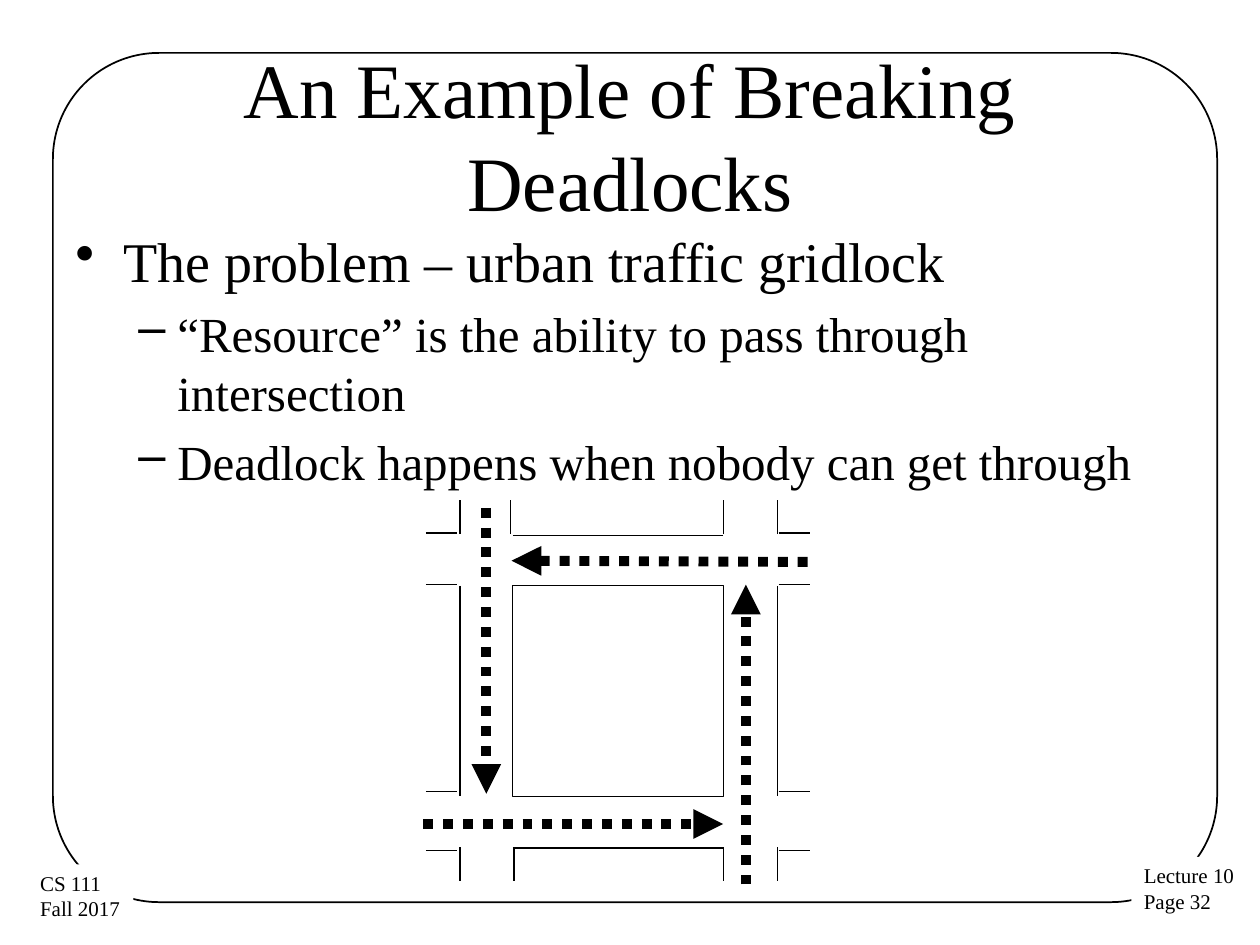
from itertools import product
from typing import NamedTuple

from lxml.etree import SubElement
from pptx import Presentation
from pptx.dml.color import RGBColor
from pptx.enum.dml import MSO_LINE_DASH_STYLE as Dash
from pptx.enum.shapes import MSO_CONNECTOR_TYPE as Connector, MSO_SHAPE as Preset
from pptx.enum.text import MSO_ANCHOR as Anchor, PP_ALIGN as Align
from pptx.oxml.ns import qn
from pptx.util import Inches, Pt

FONT = "Times New Roman"
BLACK = "000000"
WHITE = "FFFFFF"


class Box(NamedTuple):
    left: float
    top: float
    width: float
    height: float


class Segment(NamedTuple):
    x1: float
    y1: float
    x2: float
    y2: float


class Level(NamedTuple):
    bullet: str
    size: int
    margin: float
    indent: float


class Point(NamedTuple):
    text: str
    level: int


class Footer(NamedTuple):
    box: Box
    lines: tuple[str, ...]


LEVELS = [Level("•", 32, 0.38, -0.38), Level("–", 28, 0.81, -0.31)]
POINTS = [
    Point("The problem – urban traffic gridlock", 0),
    Point("“Resource” is the ability to pass through intersection", 1),
    Point("Deadlock happens when nobody can get through", 1),
]
FOOTERS = [
    Footer(Box(8.98, 6.8, 0.93, 0.51), ("Lecture 10", "Page 32")),
    Footer(Box(0.22, 6.86, 0.84, 0.51), ("CS 111", "Fall 2017")),
]

WEST, BLOCK_LEFT, BLOCK_RIGHT, EAST = 3.65, 4.07, 5.74, 6.17
BLOCK_TOP, BLOCK_BOTTOM = 4.65, 6.32
BLOCK_EDGES = [
    Segment(BLOCK_LEFT, 4.25, BLOCK_RIGHT, 4.25),
    Segment(BLOCK_LEFT, 6.73, BLOCK_RIGHT, 6.73),
    Segment(EAST, BLOCK_TOP, EAST, BLOCK_BOTTOM),
    Segment(WEST, BLOCK_TOP, WEST, BLOCK_BOTTOM),
]
NORTH_CURBS = [Segment(x, 4.24, x, 3.97) for x in (WEST, 4.05, BLOCK_RIGHT, EAST)]
SOUTH_CURBS = [Segment(x, 6.99, x, 6.72) for x in (WEST, 4.08, BLOCK_RIGHT, EAST)]
SIDE_CURBS = [
    Segment(x, y, x + 0.25, y)
    for x, y in product((3.38, 6.18), (4.23, 4.64, 6.28, 6.75))
]
TRAFFIC = [
    Segment(6.41, 4.46, 4.06, 4.45),
    Segment(3.86, 4.03, 3.86, 6.3),
    Segment(3.36, 6.54, 5.74, 6.54),
    Segment(5.92, 7.02, 5.92, 4.64),
]


def rgb(value: str) -> RGBColor:
    return RGBColor.from_string(value)


def set_font(paragraph, size: int) -> None:
    paragraph.font.name = FONT
    paragraph.font.size = Pt(size)
    paragraph.font.color.rgb = rgb(BLACK)


def add_text_box(slide, box: Box, wrap: bool = True):
    area = slide.shapes.add_textbox(*map(Inches, box))
    area.text_frame.word_wrap = wrap
    return area


def add_outline(slide, preset, box: Box, corner: float, weight: float) -> None:
    outline = slide.shapes.add_shape(preset, *map(Inches, box))
    outline.adjustments[0] = corner
    outline.shadow.inherit = False
    outline.fill.background()
    outline.line.color.rgb = rgb(BLACK)
    outline.line.width = Pt(weight)


def add_segment(slide, segment: Segment, weight: float):
    road = slide.shapes.add_connector(Connector.STRAIGHT, *map(Inches, segment))
    road.line.color.rgb = rgb(BLACK)
    road.line.width = Pt(weight)
    SubElement(road._element.spPr, qn("a:effectLst"))
    return road


def add_traffic(slide, segment: Segment) -> None:
    flow = add_segment(slide, segment, 5.67)
    flow.line.dash_style = Dash.ROUND_DOT
    SubElement(flow.line._get_or_add_ln(), qn("a:tailEnd"), type="triangle")


def add_footer(slide, footer: Footer) -> None:
    area = add_text_box(slide, footer.box, wrap=False)
    area.fill.solid()
    area.fill.fore_color.rgb = rgb(WHITE)
    area.text_frame.text = "\n".join(footer.lines)
    for paragraph in area.text_frame.paragraphs:
        set_font(paragraph, 12)


def add_title(slide, text: str) -> None:
    frame = add_text_box(slide, Box(0.5, 0.44, 9, 1.25)).text_frame
    frame.vertical_anchor = Anchor.MIDDLE
    frame.text = text
    heading = frame.paragraphs[0]
    heading.alignment = Align.CENTER
    set_font(heading, 44)


def add_points(slide, points: list[Point]) -> None:
    frame = add_text_box(slide, Box(0.5, 1.75, 9, 4.95)).text_frame
    frame.text = "\n".join(point.text for point in points)
    for paragraph, point in zip(frame.paragraphs, points):
        level = LEVELS[point.level]
        paragraph.level = point.level
        paragraph.space_before = Pt(level.size * 0.2)
        set_font(paragraph, level.size)
        properties = paragraph._p.get_or_add_pPr()
        properties.set("marL", str(Inches(level.margin)))
        properties.set("indent", str(Inches(level.indent)))
        bullet = properties.makeelement(qn("a:buChar"), {"char": level.bullet})
        properties.find(qn("a:defRPr")).addprevious(bullet)


def main() -> None:
    deck = Presentation()
    deck.slide_width, deck.slide_height = Inches(10), Inches(7.5)
    slide = deck.slides.add_slide(deck.slide_layouts[6])

    add_outline(slide, Preset.ROUNDED_RECTANGLE, Box(0.42, 0.42, 9.24, 6.74), 0.125, 1)
    for footer in FOOTERS:
        add_footer(slide, footer)
    add_title(slide, "An Example of Breaking Deadlocks")
    add_points(slide, POINTS)

    block = Box(BLOCK_LEFT, BLOCK_TOP, BLOCK_RIGHT - BLOCK_LEFT, BLOCK_BOTTOM - BLOCK_TOP)
    add_outline(slide, Preset.ROUNDED_RECTANGLE, block, 0, 0.75)
    for segment in BLOCK_EDGES + NORTH_CURBS + SOUTH_CURBS + SIDE_CURBS:
        add_segment(slide, segment, 0.75)
    for segment in TRAFFIC:
        add_traffic(slide, segment)

    deck.save("out.pptx")


if __name__ == "__main__":
    main()
